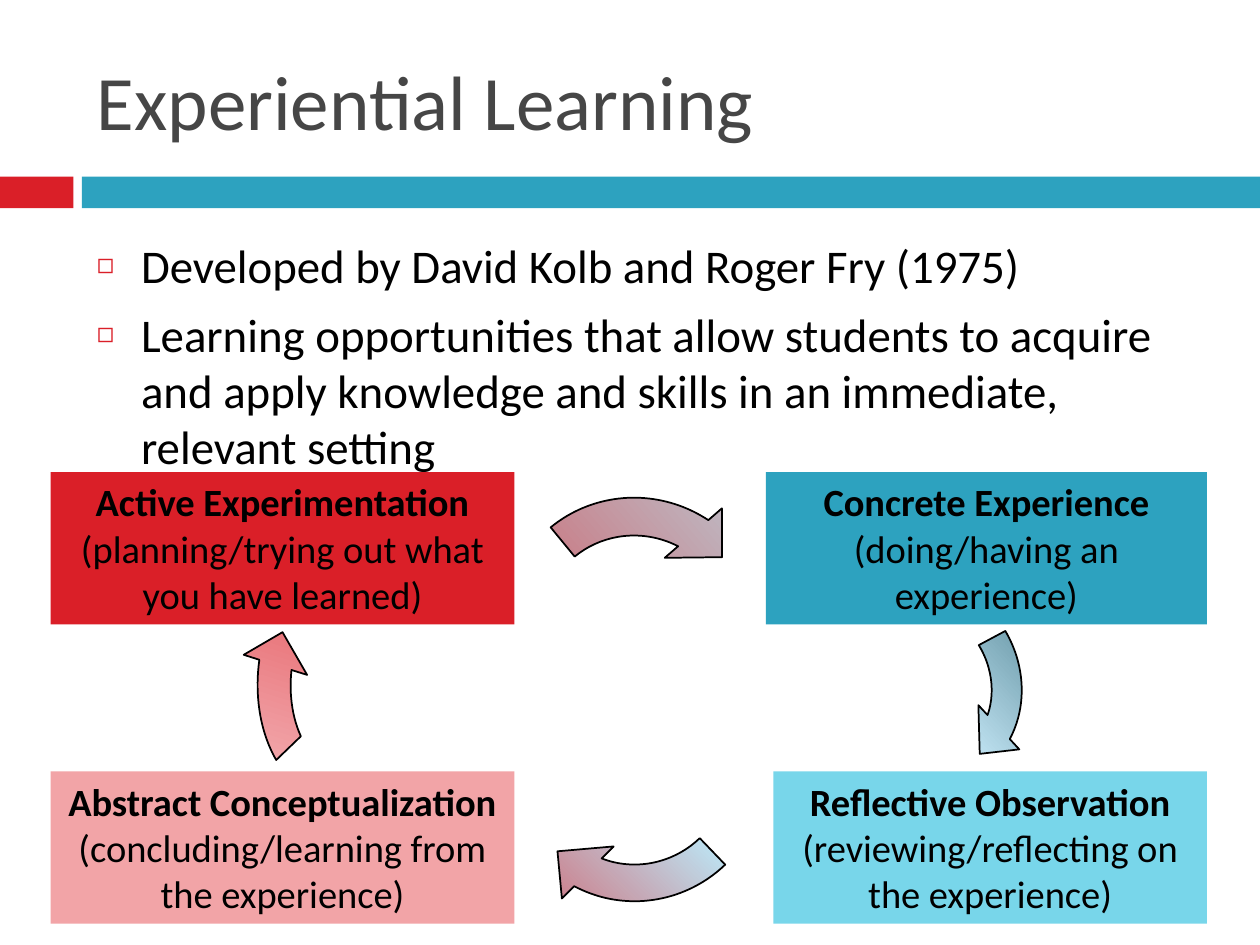
from dataclasses import dataclass

from lxml.etree import SubElement
from pptx import Presentation
from pptx.dml.color import RGBColor as RGB
from pptx.enum.shapes import MSO_SHAPE as SHAPE
from pptx.enum.text import MSO_ANCHOR as ANCHOR, MSO_AUTO_SIZE as AUTO, PP_ALIGN as ALIGN
from pptx.oxml.ns import qn
from pptx.util import Cm, Pt


@dataclass(frozen=True)
class Theme:
    font: str = "Calibri"
    title_size: float = 44
    body_size: float = 26.8
    box_size: float = 22
    black: str = "000000"
    grey: str = "464646"
    red: str = "DA1F28"
    pink: str = "F2A4A7"
    blush: str = "F9D1D3"
    teal: str = "2DA2BF"
    cyan: str = "78D6EA"
    pale_cyan: str = "B5E9F4"
    deep_teal: str = "175160"
    ice: str = "BDE0EF"
    frost: str = "DFEFF6"


class Deck:
    def __init__(self, theme):
        self.theme = theme
        self.prs = Presentation()
        self.prs.slide_width, self.prs.slide_height = Cm(25.4), Cm(19.05)
        self.slide = self.prs.slides.add_slide(self.prs.slide_layouts[1])

    def run(self, p, text, size, color, bold=False):
        r = p.add_run()
        r.text = text
        r.font.name, r.font.size, r.font.bold = self.theme.font, Pt(size), bold
        r.font.color.rgb = RGB.from_string(color)

    def place(self, sp, at):
        sp.left, sp.top, sp.width, sp.height = map(Cm, at)

    def paragraph(self, tf, i):
        return tf.add_paragraph() if i else tf.paragraphs[0]

    def shape(self, kind, at):
        sp = self.slide.shapes.add_shape(kind, *map(Cm, at))
        sp.shadow.inherit = False
        return sp

    def rect(self, at, color):
        sp = self.shape(SHAPE.RECTANGLE, at)
        sp.fill.solid()
        sp.fill.fore_color.rgb = RGB.from_string(color)
        sp.line.fill.background()
        return sp

    def title(self, text, at):
        sp = self.slide.shapes.title
        self.place(sp, at)
        tf = sp.text_frame
        tf.auto_size, tf.vertical_anchor = AUTO.NONE, ANCHOR.MIDDLE
        p = tf.paragraphs[0]
        p.alignment = ALIGN.LEFT
        self.run(p, text, self.theme.title_size, self.theme.grey)

    def bullets(self, items, at):
        sp = self.slide.placeholders[1]
        self.place(sp, at)
        tf = sp.text_frame
        tf.auto_size = AUTO.NONE
        for i, text in enumerate(items):
            p = self.paragraph(tf, i)
            p.space_before = Pt(7)
            pPr = p._p.get_or_add_pPr()
            pPr.set("marL", str(Cm(0.89)))
            pPr.set("indent", str(-Cm(0.89)))
            clr = SubElement(pPr, qn("a:buClr"))
            SubElement(clr, qn("a:srgbClr"), val=self.theme.red)
            SubElement(pPr, qn("a:buSzPct"), val="60000")
            SubElement(pPr, qn("a:buChar"), char="◻")
            self.run(p, text, self.theme.body_size, self.theme.black)

    def stage(self, name, detail, at, color):
        tf = self.rect(at, color).text_frame
        tf.word_wrap, tf.vertical_anchor = True, ANCHOR.TOP
        tf.auto_size = AUTO.SHAPE_TO_FIT_TEXT
        for i, text in enumerate((name, detail)):
            p = self.paragraph(tf, i)
            p.alignment = ALIGN.CENTER
            self.run(p, text, self.theme.box_size, self.theme.black, bold=i == 0)

    def arrow(self, at, rotation, start, colors, angle):
        sp = self.shape(SHAPE.CIRCULAR_ARROW, at)
        sp.rotation = rotation
        for i, value in enumerate((0.125, 11.42, 204.58, start, 0.125)):
            sp.adjustments[i] = value
        sp.fill.gradient()
        grad = sp._element.spPr.find(qn("a:gradFill"))
        for child in list(grad):
            grad.remove(child)
        grad.set("rotWithShape", "1")
        stops = SubElement(grad, qn("a:gsLst"))
        for i, color in enumerate(colors):
            gs = SubElement(stops, qn("a:gs"), pos=str(100000 * i // (len(colors) - 1)))
            SubElement(gs, qn("a:srgbClr"), val=color)
        SubElement(grad, qn("a:lin"), ang=str(angle * 60000), scaled="0")
        sp.line.color.rgb = RGB.from_string(self.theme.black)
        sp.line.width = Pt(1)


def main():
    t = Theme()
    deck = Deck(t)

    deck.rect((0, 3.56, 1.48, 0.64), t.red)
    deck.rect((1.65, 3.56, 23.75, 0.64), t.teal)
    deck.title("Experiential Learning", (1.7, 0.64, 22.65, 2.75))
    deck.bullets((
        "Developed by David Kolb and Roger Fry (1975)",
        "Learning opportunities that allow students to acquire and apply "
        "knowledge and skills in an immediate, relevant setting",
    ), (1.7, 4.65, 21.8, 4.88))

    left, right, top, bottom, height = 1.02, 24.33, 9.52, 15.55, 3.07
    wide, medium, narrow = 9.35, 8.89, 8.74
    for name, detail, x, y, width, color in (
        ("Active Experimentation", "(planning/trying out what you have learned)",
         left, top, wide, t.red),
        ("Abstract Conceptualization", "(concluding/learning from the experience)",
         left, bottom, wide, t.pink),
        ("Reflective Observation", "(reviewing/reflecting on the experience)",
         right - narrow, bottom, narrow, t.cyan),
        ("Concrete Experience", "(doing/having an experience)",
         right - medium, top, medium, t.teal),
    ):
        deck.stage(name, detail, (x, y, width, height), color)

    for at, rotation, start, colors, angle in (
        ((15.77, 11.3, 5.23, 4.85), 47.2, 170.82, (t.deep_teal, t.ice, t.frost), 90),
        ((9.83, 12.6, 5.99, 5.92), 134.8, 162.86, (t.red, t.ice, t.frost), 180),
        ((9.78, 9.63, 6.1, 6.2), 319.1, 162.86, (t.red, t.pale_cyan), 0),
        ((4.93, 9.96, 5.36, 6.78), 197.6, 179.07, (t.red, t.blush), 270),
    ):
        deck.arrow(at, rotation, start, colors, angle)

    deck.prs.save("out.pptx")


if __name__ == "__main__":
    main()
